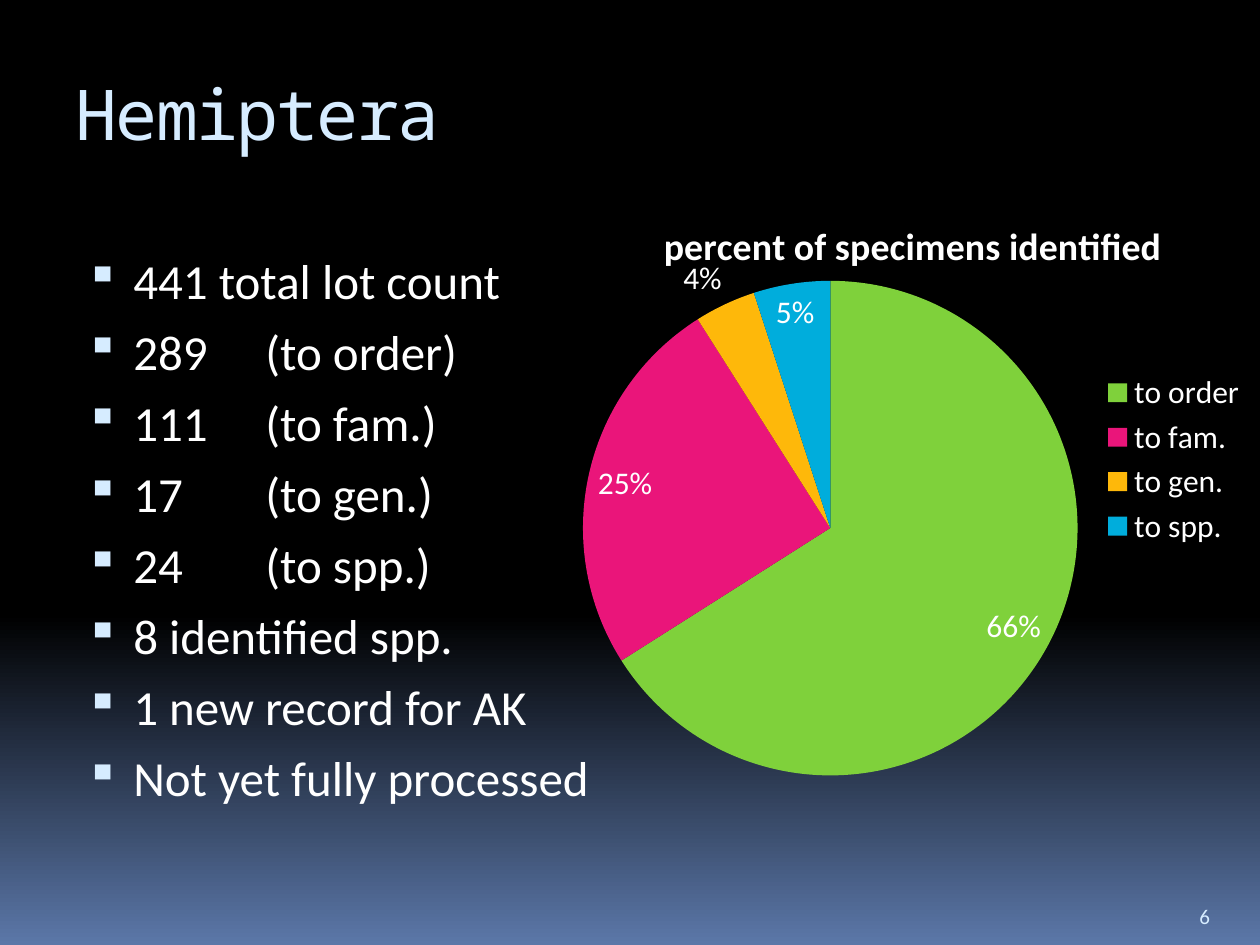
from lxml.etree import SubElement
from pptx import Presentation
from pptx.chart.data import CategoryChartData
from pptx.dml.color import RGBColor
from pptx.enum.chart import XL_CHART_TYPE, XL_LABEL_POSITION, XL_LEGEND_POSITION
from pptx.enum.text import MSO_ANCHOR, PP_ALIGN
from pptx.oxml import parse_xml
from pptx.oxml.ns import nsdecls, qn
from pptx.util import Pt

PX = 914400 / 126
BODY_FONT, TITLE_FONT = "Calibri", "Noto Sans Mono"
WHITE = RGBColor(0xFF, 0xFF, 0xFF)
PALE_BLUE = RGBColor(0xD6, 0xEC, 0xFF)
BLACK = RGBColor(0x00, 0x00, 0x00)
DUSK_BLUE = RGBColor(0x5B, 0x77, 0xA8)
BACKGROUND_STOPS = [(0, BLACK), (65, BLACK), (100, DUSK_BLUE)]

TITLE = "Hemiptera"
FINDINGS = [
    "441 total lot count",
    "289 \t(to order)",
    "111 \t(to fam.)",
    "17 \t\t(to gen.)",
    "24\t\t(to spp.)",
    "8 identified spp.",
    "1 new record for AK",
    "Not yet fully processed",
]
CHART_TITLE = "percent of specimens identified"
IDENTIFIED = [
    ("to order", 66, RGBColor(0x7F, 0xD1, 0x3B)),
    ("to fam.", 25, RGBColor(0xEA, 0x15, 0x7A)),
    ("to gen.", 4, RGBColor(0xFE, 0xB8, 0x0A)),
    ("to spp.", 5, RGBColor(0x00, 0xAD, 0xDC)),
]
SLIDE_NUMBER = "6"

TITLE_BOX = (63, 71, 1134, 126)
FINDINGS_BOX = (64, 244, 557, 624)
CHART_BOX = (567, 116, 693, 687)
NUMBER_BOX = (1187, 885, 63, 50)


def emu(*lengths):
    return [round(length * PX) for length in lengths]


def style(font, size, color, name=BODY_FONT):
    font.size, font.name = Pt(size), name
    font.color.rgb = color


def add_text(paragraph, text, size, color, name=BODY_FONT):
    run = paragraph.add_run()
    run.text = text
    style(run.font, size, color, name)
    return run


def paint_background(slide):
    fill = slide.background.fill
    fill.gradient()
    fill.gradient_angle = 270
    stops = slide.background._cSld.find(".//" + qn("a:gsLst"))
    for stop in list(stops):
        stops.remove(stop)
    for percent, color in BACKGROUND_STOPS:
        stop = SubElement(stops, qn("a:gs"), pos=str(percent * 1000))
        SubElement(stop, qn("a:srgbClr"), val=str(color))


def add_bullet(paragraph):
    properties = paragraph._p.get_or_add_pPr()
    properties.set("marL", str(emu(57)[0]))
    properties.set("indent", str(emu(-48)[0]))
    color = SubElement(properties, qn("a:buClr"))
    SubElement(color, qn("a:srgbClr"), val=str(PALE_BLUE))
    SubElement(properties, qn("a:buSzPct"), val="95000")
    SubElement(properties, qn("a:buChar"), char="▪")


def place_in_chart(element, index, **fractions):
    """Give a chart part a manual layout, in fractions of the chart's size."""
    for old in element.findall(qn("c:layout")):
        element.remove(old)
    layout = parse_xml(f"<c:layout {nsdecls('c')}><c:manualLayout/></c:layout>")
    manual = layout[0]
    if "w" in fractions:
        SubElement(manual, qn("c:layoutTarget"), val="inner")
    for axis in "xy":
        SubElement(manual, qn(f"c:{axis}Mode"), val="edge")
    for key, value in fractions.items():
        SubElement(manual, qn(f"c:{key}"), val=str(value))
    element.insert(index, layout)


def add_pie(slide):
    names, values, colors = zip(*IDENTIFIED)
    data = CategoryChartData()
    data.categories = names
    data.add_series(CHART_TITLE, values)
    chart = slide.shapes.add_chart(XL_CHART_TYPE.PIE, *emu(*CHART_BOX), data).chart
    style(chart.font, 18, WHITE)

    heading = chart.chart_title
    run = add_text(heading.text_frame.paragraphs[0], CHART_TITLE, 21.6, WHITE)
    run.font.bold = True
    heading.include_in_layout = False
    place_in_chart(heading._element, 1, x=0.13, y=0.14)

    chart.has_legend = True
    chart.legend.position = XL_LEGEND_POSITION.RIGHT
    chart.legend.include_in_layout = False
    style(chart.legend.font, 18, WHITE)

    pie = chart.plots[0]
    pie.vary_by_categories = True
    for index, color in enumerate(colors):
        fill = pie.series[0].points[index].format.fill
        fill.solid()
        fill.fore_color.rgb = color
    pie.has_data_labels = True
    labels = pie.data_labels
    labels.show_percentage, labels.show_value = True, False
    labels.number_format, labels.number_format_is_linked = "0%", False
    labels.position = XL_LABEL_POSITION.BEST_FIT
    style(labels.font, 18, WHITE)
    plot_area = chart._chartSpace.find(".//" + qn("c:plotArea"))
    place_in_chart(plot_area, 0, x=0.02, y=0.24, w=0.72, h=0.72)


def main():
    deck = Presentation()
    deck.slide_width, deck.slide_height = emu(1260, 945)
    slide = deck.slides.add_slide(deck.slide_layouts[5])
    paint_background(slide)

    title = slide.shapes.title
    title.left, title.top, title.width, title.height = emu(*TITLE_BOX)
    frame = title.text_frame
    frame.vertical_anchor, frame.margin_top = MSO_ANCHOR.TOP, 0
    frame.paragraphs[0].alignment = PP_ALIGN.LEFT
    run = add_text(frame.paragraphs[0], TITLE, 40, PALE_BLUE, TITLE_FONT)
    run.font._element.set("spc", "-100")

    frame = slide.shapes.add_textbox(*emu(*FINDINGS_BOX)).text_frame
    frame.word_wrap = True
    for index, finding in enumerate(FINDINGS):
        paragraph = frame.add_paragraph() if index else frame.paragraphs[0]
        paragraph.space_before = Pt(7)
        add_bullet(paragraph)
        add_text(paragraph, finding, 28, WHITE)

    add_pie(slide)

    frame = slide.shapes.add_textbox(*emu(*NUMBER_BOX)).text_frame
    frame.word_wrap = True
    frame.vertical_anchor = MSO_ANCHOR.BOTTOM
    add_text(frame.paragraphs[0], SLIDE_NUMBER, 12, PALE_BLUE)

    deck.save("out.pptx")


if __name__ == "__main__":
    main()
